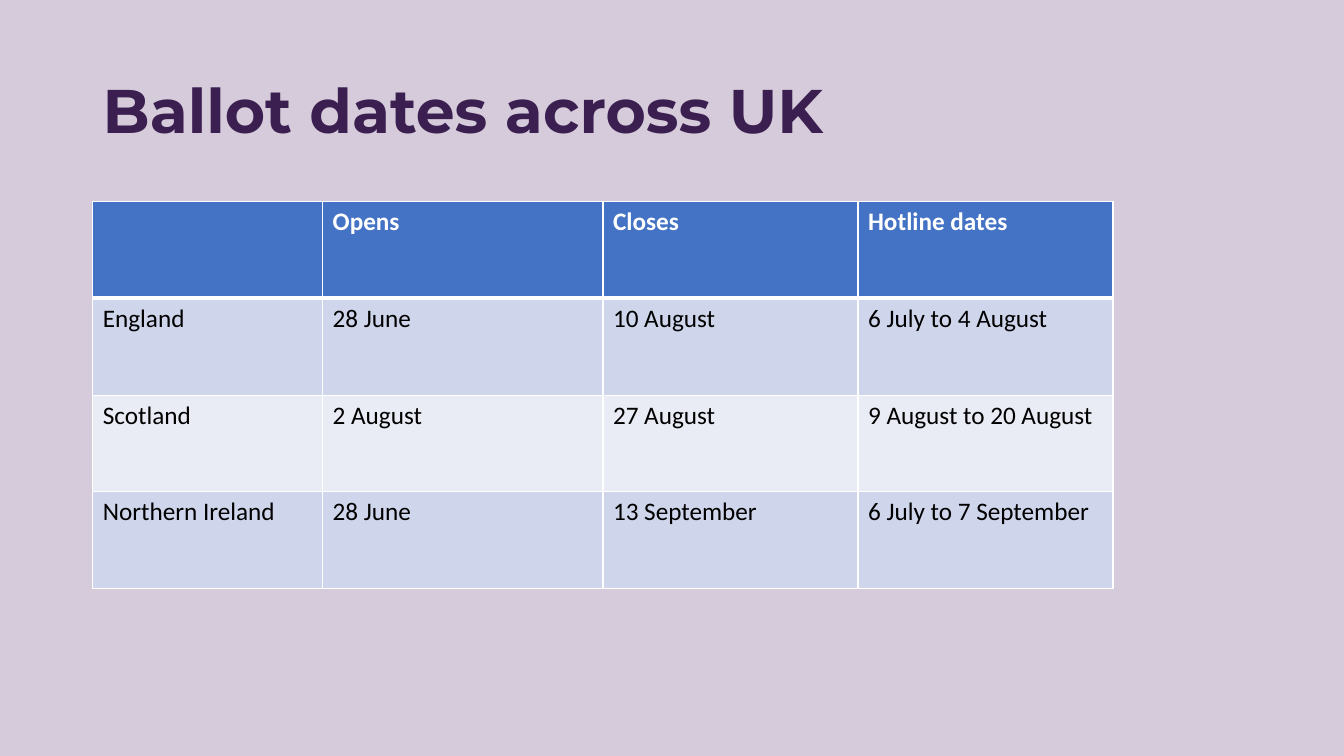
from lxml.etree import SubElement as Sub
from pptx import Presentation
from pptx.dml.color import RGBColor as RGB
from pptx.enum.text import MSO_ANCHOR as Anchor
from pptx.oxml.ns import qn
from pptx.util import Inches, Pt

COLORS = {
    "back": "D6CBDA",
    "title": "3A1F50",
    "head": "4472C4",
    "odd": "CFD5EA",
    "even": "E9EBF5",
    "white": "FFFFFF",
    "black": "000000",
}
ROWS = [
    ["", "Opens", "Closes", "Hotline dates"],
    ["England", "28 June", "10 August", "6 July to 4 August"],
    ["Scotland", "2 August", "27 August", "9 August to 20 August"],
    ["Northern Ireland", "28 June", "13 September", "6 July to 7 September"],
]
WIDTHS = [2.28, 2.78, 2.53, 2.53]
HEIGHT = 0.96


def write(frame, text, size=18, font="Calibri", color="black", bold=False):
    para = frame.paragraphs[0]
    para.text = text
    para.font.size = Pt(size)
    for run in para.runs:
        run.font.size = Pt(size)
        run.font.name = font
        run.font.bold = bold
        run.font.color.rgb = RGB.from_string(COLORS[color])
    return para


def edge(cell, side, width):
    """Draw a white border on one side of a cell."""
    props = cell._tc.get_or_add_tcPr()
    line = Sub(props, qn(f"a:ln{side}"), w=str(Pt(width)))
    fill = Sub(line, qn("a:solidFill"))
    Sub(fill, qn("a:srgbClr"), val=COLORS["white"])


deck = Presentation()
deck.slide_width = Inches(13.33)
deck.slide_height = Inches(7.5)
slide = deck.slides.add_slide(deck.slide_layouts[6])
slide.background.fill.solid()
slide.background.fill.fore_color.rgb = RGB.from_string(COLORS["back"])

# Title
box = slide.shapes.add_textbox(Inches(0.92), Inches(0.4), Inches(11.5), Inches(1.45))
frame = box.text_frame
frame.word_wrap = True
frame.vertical_anchor = Anchor.MIDDLE
title = write(frame, "Ballot dates across UK", size=44, font="Montserrat",
              color="title", bold=True)
title.line_spacing = 0.9

# Ballot table
table = slide.shapes.add_table(
    len(ROWS), len(WIDTHS), Inches(0.92), Inches(2),
    Inches(sum(WIDTHS)), Inches(HEIGHT * len(ROWS))).table
for col, width in zip(table.columns, WIDTHS):
    col.width = Inches(width)

for r, texts in enumerate(ROWS):
    table.rows[r].height = Inches(HEIGHT)
    head = r == 0
    shade = "head" if head else "odd" if r % 2 else "even"
    for c, text in enumerate(texts):
        cell = table.cell(r, c)
        edge(cell, "L", 1)
        edge(cell, "R", 1)
        edge(cell, "T", 3 if r == 1 else 1)
        edge(cell, "B", 3 if head else 1)
        cell.fill.solid()
        cell.fill.fore_color.rgb = RGB.from_string(COLORS[shade])
        write(cell.text_frame, text, color="white" if head else "black", bold=head)

deck.save("out.pptx")
